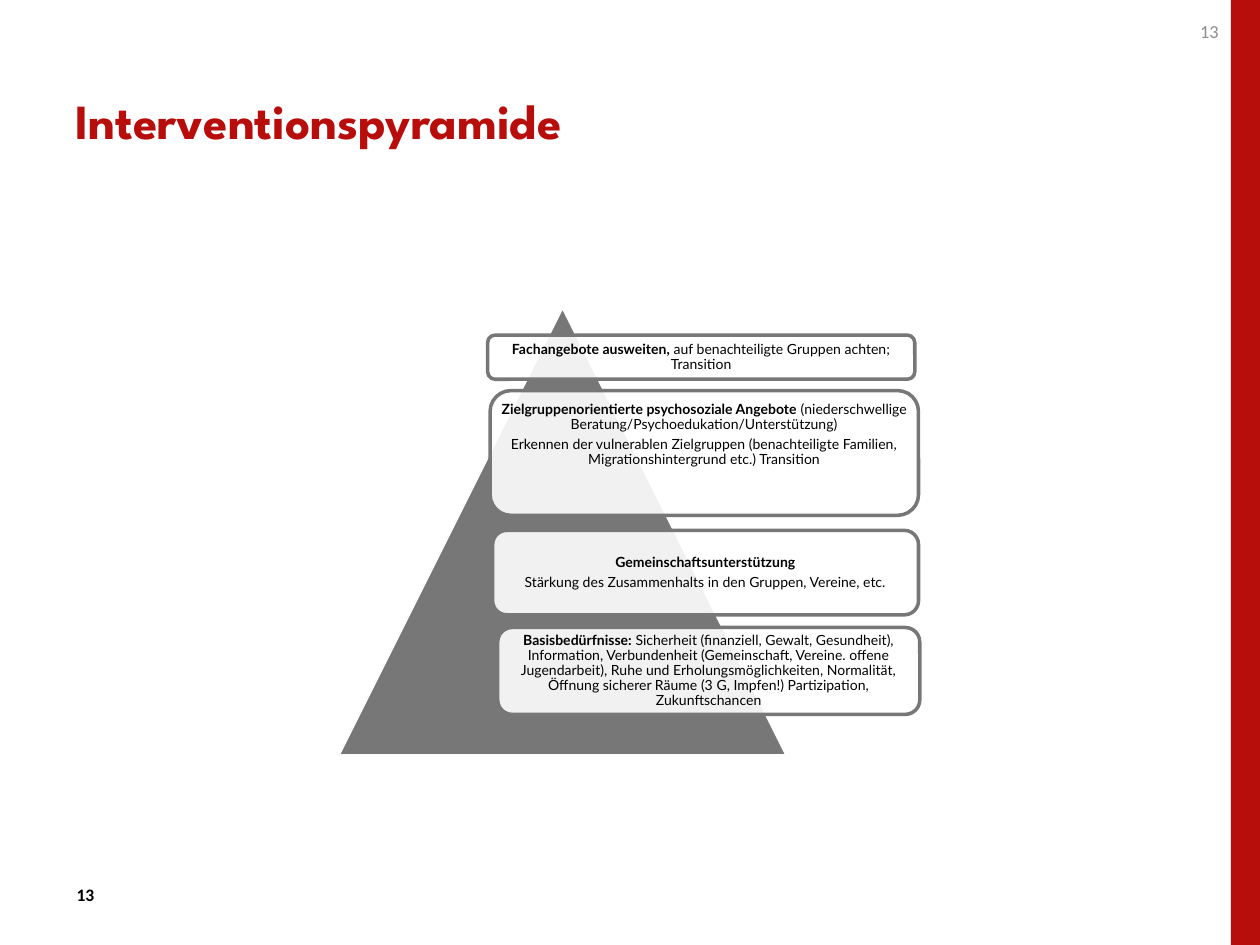
"""Build the slide with the intervention pyramid and its four levels."""
from lxml.etree import SubElement
from pptx import Presentation
from pptx.dml.color import RGBColor as RGB
from pptx.enum.shapes import MSO_SHAPE as SHAPE
from pptx.enum.text import MSO_ANCHOR as ANCHOR, PP_ALIGN as ALIGN
from pptx.oxml.ns import qn
from pptx.util import Inches, Pt

THEME = {
    "red": RGB.from_string("B70E0C"),
    "grey": RGB.from_string("777777"),
    "pale": RGB.from_string("8C8C8C"),
    "white": RGB.from_string("FFFFFF"),
    "black": RGB.from_string("000000"),
    "title_font": "League Spartan",
    "level_font": "Lato",
    "number_font": "Calibri",
    "title_size": 28,
    "level_size": 8,
    "line_width": 2,
    "level_alpha": 90,
}

TITLE = "Interventionspyramide"
PAGE_NUMBERS = [
    ((7.44, 0.05), ALIGN.RIGHT, 10.5, "pale", False),
    ((0.51, 6.9), ALIGN.LEFT, 10, "black", True),
]
LEVELS = [
    {"box": (3.87, 2.66, 3.39, 0.35), "bottom": 0.03, "text": [
        [("Fachangebote ausweiten, ", True),
         ("auf benachteiligte Gruppen achten; Transition", False)]]},
    {"box": (3.89, 3.1, 3.4, 0.99), "bottom": 0.32, "text": [
        [("Zielgruppenorientierte psychosoziale Angebote ", True),
         ("(niederschwellige Beratung/Psychoedukation/Unterstützung)", False)],
        [("Erkennen der vulnerablen Zielgruppen (benachteiligte Familien, "
          "Migrationshintergrund etc.) Transition", False)]]},
    {"box": (3.91, 4.21, 3.38, 0.67), "bottom": 0.03, "text": [
        [("Gemeinschaftsunterstützung", True)],
        [("Stärkung des Zusammenhalts in den Gruppen, Vereine, etc.", False)]]},
    {"box": (3.95, 4.98, 3.35, 0.69), "bottom": 0.03, "text": [
        [("Basisbedürfnisse: ", True),
         ("Sicherheit (finanziell, Gewalt, Gesundheit), Information, Verbundenheit "
          "(Gemeinschaft, Vereine. offene Jugendarbeit), Ruhe und Erholungsmöglichkeiten, "
          "Normalität, Öffnung sicherer Räume (3 G, Impfen!) Partizipation, "
          "Zukunftschancen", False)]]},
]


def style_font(font, name, size, color, bold=None):
    font.name, font.size, font.bold = name, Pt(size), bold
    font.color.rgb = THEME[color]


def add_figure(slide, preset, box, fill, line=None):
    figure = slide.shapes.add_shape(preset, *map(Inches, box))
    figure.shadow.inherit = False
    figure.fill.solid()
    figure.fill.fore_color.rgb = THEME[fill]
    if line:
        figure.line.color.rgb = THEME[line]
        figure.line.width = Pt(THEME["line_width"])
    else:
        figure.line.fill.background()
    return figure


def add_title(slide):
    title = slide.shapes.title
    title.left, title.top, title.width, title.height = map(Inches, (0.5, 0.33, 7.49, 1.25))
    title.text_frame.text = TITLE
    title.text_frame.vertical_anchor = ANCHOR.MIDDLE
    heading = title.text_frame.paragraphs[0]
    heading.alignment = ALIGN.LEFT
    style_font(heading.font, THEME["title_font"], THEME["title_size"], "red", True)


def add_page_number(slide, corner, alignment, size, color, bold):
    number = slide.shapes.add_textbox(*map(Inches, (*corner, 2.33, 0.4))).text_frame
    number.word_wrap = True
    number.vertical_anchor = ANCHOR.MIDDLE
    number.text = "13"
    number.paragraphs[0].alignment = alignment
    style_font(number.paragraphs[0].font, THEME["number_font"], size, color, bold)


def add_level(slide, level):
    card = add_figure(slide, SHAPE.ROUNDED_RECTANGLE, level["box"], "white", "grey")
    color = card.fill._xPr.find(qn("a:solidFill"))[0]
    SubElement(color, qn("a:alpha"), val=str(THEME["level_alpha"] * 1000))
    frame = card.text_frame
    frame.word_wrap = True
    frame.vertical_anchor = ANCHOR.MIDDLE
    frame.margin_left = frame.margin_right = frame.margin_top = Inches(0.03)
    frame.margin_bottom = Inches(level["bottom"])
    for index, runs in enumerate(level["text"]):
        paragraph = frame.add_paragraph() if index else frame.paragraphs[0]
        paragraph.alignment = ALIGN.CENTER
        paragraph.line_spacing = 0.9
        paragraph.space_after = Pt(0.35 * THEME["level_size"])
        style_font(paragraph.font, THEME["level_font"], THEME["level_size"], "black")
        for words, bold in runs:
            run = paragraph.add_run()
            run.text, run.font.bold = words, bold


def main():
    deck = Presentation()
    deck.slide_width, deck.slide_height = Inches(10), Inches(7.5)
    slide = deck.slides.add_slide(deck.slide_layouts[5])
    add_title(slide)
    add_figure(slide, SHAPE.RECTANGLE, (9.77, 0, 0.23, 7.5), "red")
    for page_number in PAGE_NUMBERS:
        add_page_number(slide, *page_number)
    add_figure(slide, SHAPE.ISOSCELES_TRIANGLE, (2.68, 2.43, 3.57, 3.57), "grey", "white")
    for level in LEVELS:
        add_level(slide, level)
    deck.save("out.pptx")


if __name__ == "__main__":
    main()
